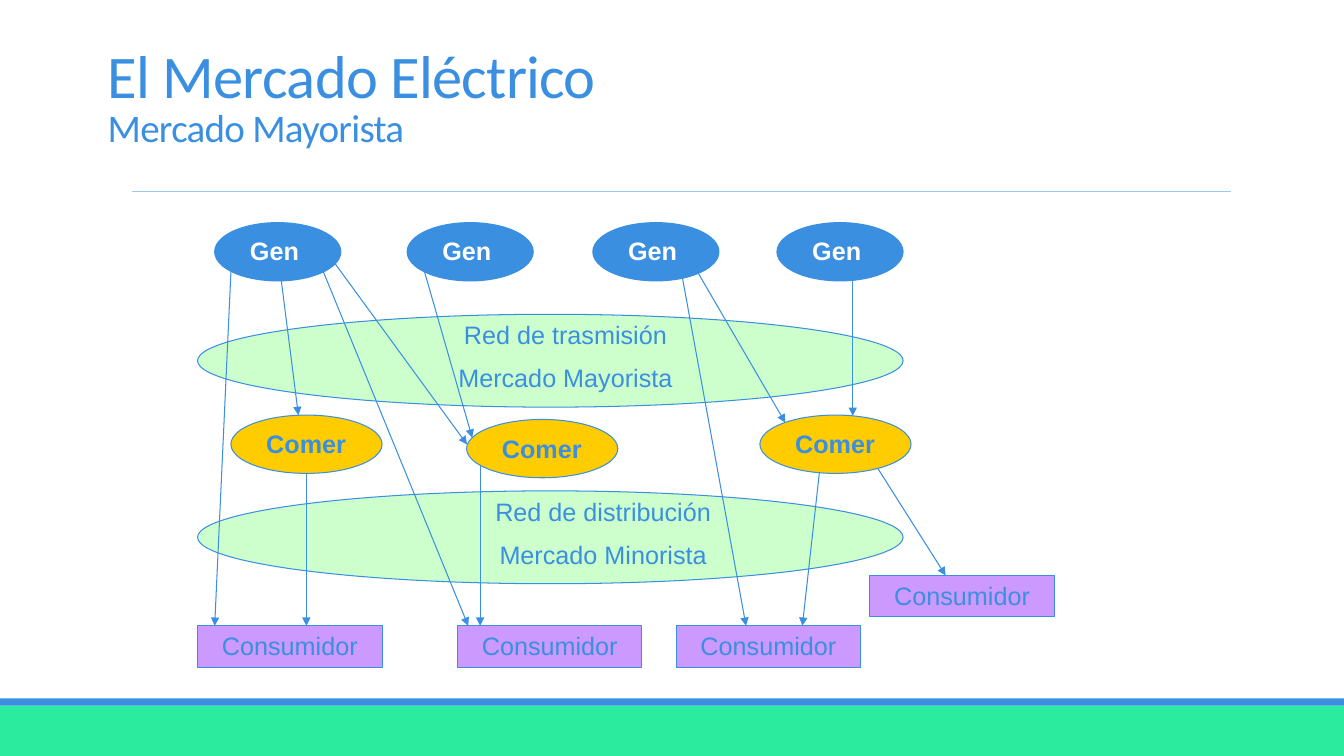
from dataclasses import dataclass

from pptx import Presentation
from pptx.dml.color import RGBColor
from pptx.enum.shapes import MSO_CONNECTOR, MSO_SHAPE
from pptx.enum.text import MSO_ANCHOR, MSO_AUTO_SIZE, PP_ALIGN
from pptx.oxml.ns import qn
from pptx.shapes.autoshape import Shape
from pptx.shapes.connector import Connector
from pptx.slide import Slide
from pptx.util import Cm, Pt
from lxml import etree

ELLIPSE, RECTANGLE = MSO_SHAPE.OVAL, MSO_SHAPE.RECTANGLE
STRAIGHT = MSO_CONNECTOR.STRAIGHT
LEFT, CENTER = PP_ALIGN.LEFT, PP_ALIGN.CENTER
TOP, BOTTOM = MSO_ANCHOR.TOP, MSO_ANCHOR.BOTTOM
NO_AUTOFIT = MSO_AUTO_SIZE.NONE

BLUE = RGBColor(0x3A, 0x8F, 0xE1)
PALE_BLUE = RGBColor(0x9C, 0xC7, 0xF0)
GREEN = RGBColor(0x2B, 0xEB, 0x9F)
PALE_GREEN = RGBColor(0xCC, 0xFF, 0xCC)
AMBER = RGBColor(0xFF, 0xCC, 0x00)
VIOLET = RGBColor(0xCC, 0x99, 0xFF)
WHITE = RGBColor(0xFF, 0xFF, 0xFF)


@dataclass(frozen=True)
class Box:
    left: float
    top: float
    width: float
    height: float

    def lengths(self) -> tuple[Cm, Cm, Cm, Cm]:
        return Cm(self.left), Cm(self.top), Cm(self.width), Cm(self.height)


@dataclass(frozen=True)
class NodeStyle:
    width: float
    height: float
    fill: RGBColor
    label: Box
    color: RGBColor = BLUE
    bold: bool = False
    align: PP_ALIGN = LEFT


@dataclass(frozen=True)
class Node:
    style: NodeStyle
    text: str
    left: float
    top: float
    label_shift: float = 0


@dataclass(frozen=True)
class Flow:
    x1: float
    y1: float
    x2: float
    y2: float


GENERATOR = NodeStyle(3.18, 1.47, BLUE, Box(0.64, 0.2, 1.9, 1.02), WHITE, True)
NETWORK = NodeStyle(17.78, 2.34, PALE_GREEN, Box(4.01, 0, 9.32, 2.16), align=CENTER)
TRADER = NodeStyle(3.81, 1.47, AMBER, Box(0.64, 0.22, 2.54, 1.02), bold=True)

NODES = [
    *(Node(GENERATOR, "Gen", left, 5.61) for left in (5.41, 10.26, 14.94, 19.58)),
    Node(NETWORK, "Red de trasmisión\nMercado Mayorista", 4.98, 7.92, 0.6),
    Node(NETWORK, "Red de distribución\nMercado Minorista", 4.98, 12.37, 1.55),
    Node(TRADER, "Comer", 5.82, 10.46),
    Node(TRADER, "Comer", 11.76, 10.57),
    Node(TRADER, "Comer", 19.15, 10.46),
]
CONSUMERS = [
    Box(left, top, 4.65, 1.04)
    for left, top in ((4.98, 15.77), (11.53, 15.77), (17.04, 15.77), (21.92, 14.5))
]
FLOWS = [
    Flow(5.82, 6.84, 5.41, 15.77),
    Flow(7.09, 7.08, 7.52, 10.46),
    Flow(8.15, 6.85, 11.8, 15.77),
    Flow(8.45, 6.65, 11.77, 11.2),
    Flow(10.7, 6.85, 11.9, 11.03),
    Flow(17.6, 6.89, 19.79, 10.65),
    Flow(21.49, 7.07, 21.49, 10.48),
    Flow(22.12, 11.8, 23.83, 14.5),
    Flow(20.65, 11.91, 20.22, 15.77),
    Flow(17.2, 7.01, 18.8, 15.77),
    Flow(7.72, 11.93, 7.72, 15.77),
    Flow(12.1, 11.73, 12.1, 15.77),
]


def paint(shape: Shape, fill: RGBColor, outlined: bool = True) -> None:
    shape.shadow.inherit = False
    shape.fill.solid()
    shape.fill.fore_color.rgb = fill
    if outlined:
        shape.line.color.rgb = BLUE
        shape.line.width = Pt(0.75)
    else:
        shape.line.fill.background()


def write(shape: Shape, text: str, color: RGBColor, bold: bool, align: PP_ALIGN) -> None:
    frame = shape.text_frame
    frame.text = text
    frame.word_wrap = True
    frame.vertical_anchor = TOP
    if align == LEFT:
        frame.margin_right = 0
    for index, paragraph in enumerate(frame.paragraphs):
        paragraph.alignment = align
        paragraph.space_before = Pt(9.5 if index else 0)
        for run in paragraph.runs:
            run.font.name = "Arial"
            run.font.size = Pt(18)
            run.font.bold = bold
            run.font.color.rgb = color


def draw_title(slide: Slide) -> None:
    title = slide.shapes.title
    title.left, title.top, title.width, title.height = Box(2.46, 1.68, 22.89, 2.24).lengths()
    frame = title.text_frame
    frame.auto_size = NO_AUTOFIT
    frame.word_wrap = True
    frame.vertical_anchor = BOTTOM
    heading = frame.paragraphs[0]
    heading.text = "El Mercado Eléctrico\vMercado Mayorista"
    heading.alignment = LEFT
    heading.line_spacing = 0.85
    for run, size in zip(heading.runs, (43.2, 27.9)):
        run.font.name = "Calibri"
        run.font.size = Pt(size)
        run.font.color.rgb = BLUE
        run.font._element.set("spc", "-50")


def draw_band(slide: Slide, box: Box, fill: RGBColor) -> None:
    paint(slide.shapes.add_shape(RECTANGLE, *box.lengths()), fill, outlined=False)


def draw_node(slide: Slide, node: Node) -> None:
    style, label = node.style, node.style.label
    group = slide.shapes.add_group_shape()
    outline = Box(node.left, node.top, style.width, style.height)
    paint(group.shapes.add_shape(ELLIPSE, *outline.lengths()), style.fill)
    caption = Box(node.left + label.left + node.label_shift, node.top + label.top,
                  label.width, label.height)
    write(group.shapes.add_textbox(*caption.lengths()),
          node.text, style.color, style.bold, style.align)


def draw_consumer(slide: Slide, box: Box) -> None:
    consumer = slide.shapes.add_shape(RECTANGLE, *box.lengths())
    paint(consumer, VIOLET)
    write(consumer, "Consumidor", BLUE, False, CENTER)


def draw_line(slide: Slide, flow: Flow, color: RGBColor, width: float) -> Connector:
    line = slide.shapes.add_connector(
        STRAIGHT, Cm(flow.x1), Cm(flow.y1), Cm(flow.x2), Cm(flow.y2))
    line.line.color.rgb = color
    line.line.width = Pt(width)
    etree.SubElement(line._element.spPr, qn("a:effectLst"))
    return line


def draw_flow(slide: Slide, flow: Flow) -> None:
    arrow = draw_line(slide, flow, BLUE, 0.75)
    outline = arrow._element.spPr.find(qn("a:ln"))
    etree.SubElement(outline, qn("a:tailEnd"), type="triangle")


def main() -> None:
    presentation = Presentation()
    presentation.slide_width, presentation.slide_height = Cm(33.87), Cm(19.05)
    slide = presentation.slides.add_slide(presentation.slide_layouts[5])
    draw_band(slide, Box(0, 17.78, 33.87, 1.27), GREEN)
    draw_band(slide, Box(0, 17.6, 33.87, 0.18), BLUE)
    draw_line(slide, Flow(3.33, 4.83, 31.01, 4.83), PALE_BLUE, 0.5)
    draw_title(slide)
    for node in NODES:
        draw_node(slide, node)
    for consumer in CONSUMERS:
        draw_consumer(slide, consumer)
    for flow in FLOWS:
        draw_flow(slide, flow)
    presentation.save("out.pptx")


if __name__ == "__main__":
    main()
